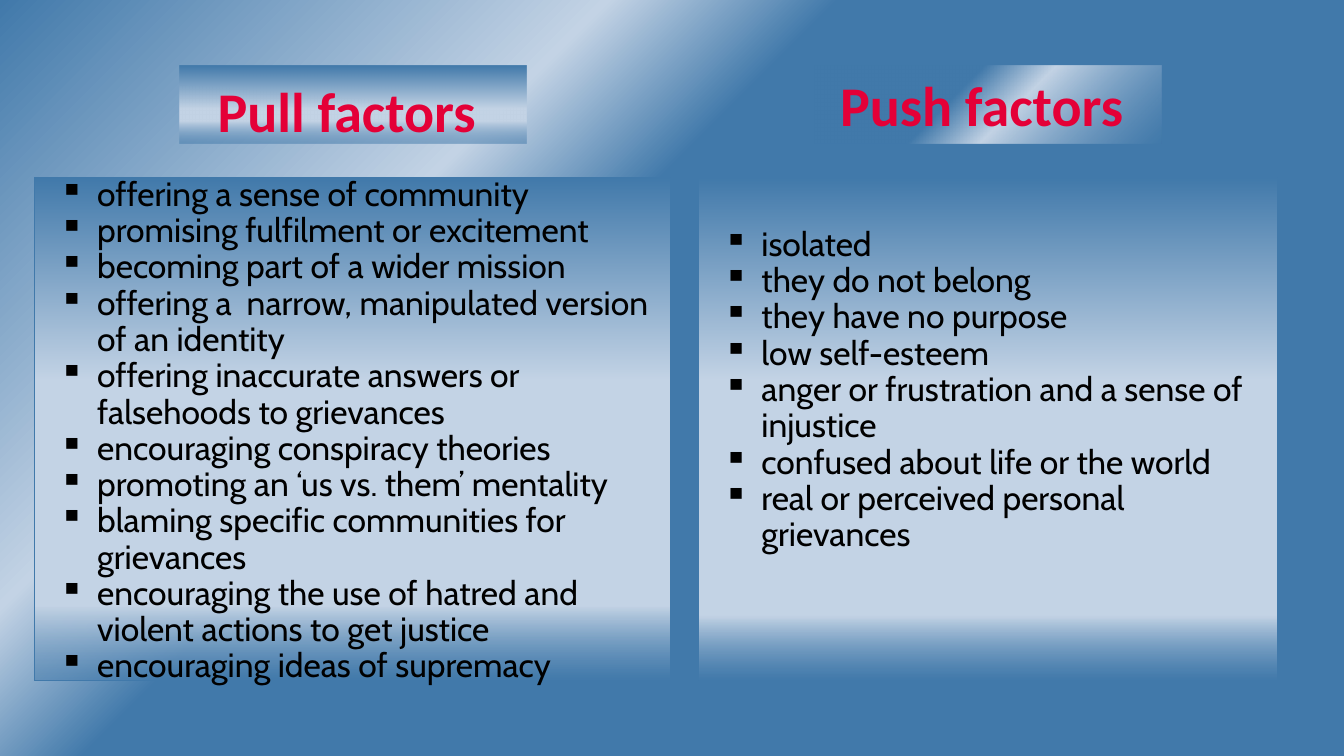
from dataclasses import dataclass

from lxml.etree import SubElement
from pptx import Presentation
from pptx.dml.color import RGBColor
from pptx.enum.shapes import MSO_SHAPE as Shape
from pptx.enum.text import MSO_ANCHOR as Anchor, PP_ALIGN as Align
from pptx.oxml.ns import qn
from pptx.util import Cm, Pt


@dataclass(frozen=True)
class Theme:
    blue: str = "4179AA"
    pale: str = "C3D3E5"
    red: str = "E40037"
    black: str = "000000"
    title_font: str = "Calibri"
    body_font: str = "Cabin"
    title_size: int = 40
    body_size: int = 24
    end_alpha: int = 51


THEME = Theme()


@dataclass(frozen=True)
class Gradient:
    stops: tuple[tuple[int, str], ...]
    angle: int


@dataclass(frozen=True)
class Panel:
    left: float
    top: float
    width: float
    height: float
    gradient: Gradient
    lines: tuple[str, ...]
    heading: bool = False
    anchor: Anchor = Anchor.TOP
    inset_x: float = 0
    inset_y: float = 0


BLUE, PALE = THEME.blue, THEME.pale
BACKDROP = Gradient(((0, BLUE), (29, PALE), (40, BLUE), (100, BLUE)), 45)
TITLE_TOP, TITLE_WIDTH, TITLE_HEIGHT = 1.65, 8.76, 1.96
BODY_TOP, BODY_HEIGHT = 4.47, 12.67

PANELS = (
    Panel(4.52, TITLE_TOP, TITLE_WIDTH, TITLE_HEIGHT,
          Gradient(((0, BLUE), (55, PALE), (71, PALE), (100, BLUE)), 90),
          ("Pull factors ",), heading=True, anchor=Anchor.BOTTOM),
    Panel(20.52, TITLE_TOP, TITLE_WIDTH, TITLE_HEIGHT,
          Gradient(((0, BLUE), (40, BLUE), (57, PALE), (100, BLUE)), 45),
          ("Push factors ",), heading=True, inset_x=0.25, inset_y=0.13),
    Panel(0.86, BODY_TOP, 16.05, BODY_HEIGHT,
          Gradient(((0, BLUE), (40, PALE), (85, PALE), (100, BLUE)), 90),
          ("offering a sense of community",
           "promising fulfilment or excitement",
           "becoming part of a wider mission",
           "offering a  narrow, manipulated version of an identity",
           "offering inaccurate answers or falsehoods to grievances",
           "encouraging conspiracy theories",
           "promoting an ‘us vs. them’ mentality",
           "blaming specific communities for grievances",
           "encouraging the use of hatred and violent actions to get justice",
           "encouraging ideas of supremacy")),
    Panel(17.6, BODY_TOP, 14.6, BODY_HEIGHT,
          Gradient(((0, BLUE), (40, PALE), (87, PALE), (100, BLUE)), 90),
          ("isolated",
           "they do not belong",
           "they have no purpose",
           "low self-esteem",
           "anger or frustration and a sense of injustice",
           "confused about life or the world",
           "real or perceived personal grievances"), inset_y=1.26),
)


def paint_gradient(owner, root, gradient: Gradient) -> None:
    owner.fill.gradient()
    fill = root.find(".//" + qn("a:gradFill"))
    stops = fill.find(qn("a:gsLst"))
    for stop in list(stops):
        stops.remove(stop)
    for position, color in gradient.stops:
        stop = SubElement(stops, qn("a:gs"), pos=str(position * 1000))
        clr = SubElement(stop, qn("a:srgbClr"), val=color)
        if position == 100:
            SubElement(clr, qn("a:alpha"), val=str(THEME.end_alpha * 1000))
    fill.find(qn("a:lin")).set("ang", str(gradient.angle * 60000))


def write_text(p, text: str, *, font: str, size: int, color: str,
               bold: bool = False, align: Align = Align.LEFT) -> None:
    p.alignment = align
    r = p.add_run()
    r.text = text
    r.font.name = font
    r.font.size = Pt(size)
    r.font.bold = bold
    r.font.color.rgb = RGBColor.from_string(color)


def add_bullet(p) -> None:
    p.level = 1
    p.line_spacing = 0.9
    p.space_before = Pt(0)
    pPr = p._p.get_or_add_pPr()
    pPr.set("marL", str(Cm(1.59)))
    pPr.set("indent", str(-Cm(0.95)))
    SubElement(pPr, qn("a:buChar"), char="▪")


def draw_panel(s, panel: Panel) -> None:
    sp = s.shapes.add_shape(Shape.RECTANGLE, Cm(panel.left), Cm(panel.top),
                            Cm(panel.width), Cm(panel.height))
    sp.shadow.inherit = False
    paint_gradient(sp, sp._element, panel.gradient)
    if panel.heading:
        sp.line.fill.background()
    else:
        sp.line.color.rgb = RGBColor.from_string(THEME.blue)
        sp.line.width = Pt(0.75)
    tf = sp.text_frame
    tf.word_wrap = True
    tf.vertical_anchor = panel.anchor
    tf.margin_left = tf.margin_right = Cm(panel.inset_x)
    tf.margin_top = Cm(panel.inset_y)
    tf.margin_bottom = 0
    for i, line in enumerate(panel.lines):
        p = tf.add_paragraph() if i else tf.paragraphs[0]
        if panel.heading:
            write_text(p, line, font=THEME.title_font, size=THEME.title_size,
                       color=THEME.red, bold=True, align=Align.CENTER)
        else:
            add_bullet(p)
            write_text(p, line, font=THEME.body_font, size=THEME.body_size,
                       color=THEME.black)


def main() -> None:
    prs = Presentation()
    prs.slide_width, prs.slide_height = Cm(33.87), Cm(19.05)
    s = prs.slides.add_slide(prs.slide_layouts[6])
    paint_gradient(s.background, s._element, BACKDROP)
    for panel in PANELS:
        draw_panel(s, panel)
    prs.save("out.pptx")


if __name__ == "__main__":
    main()
